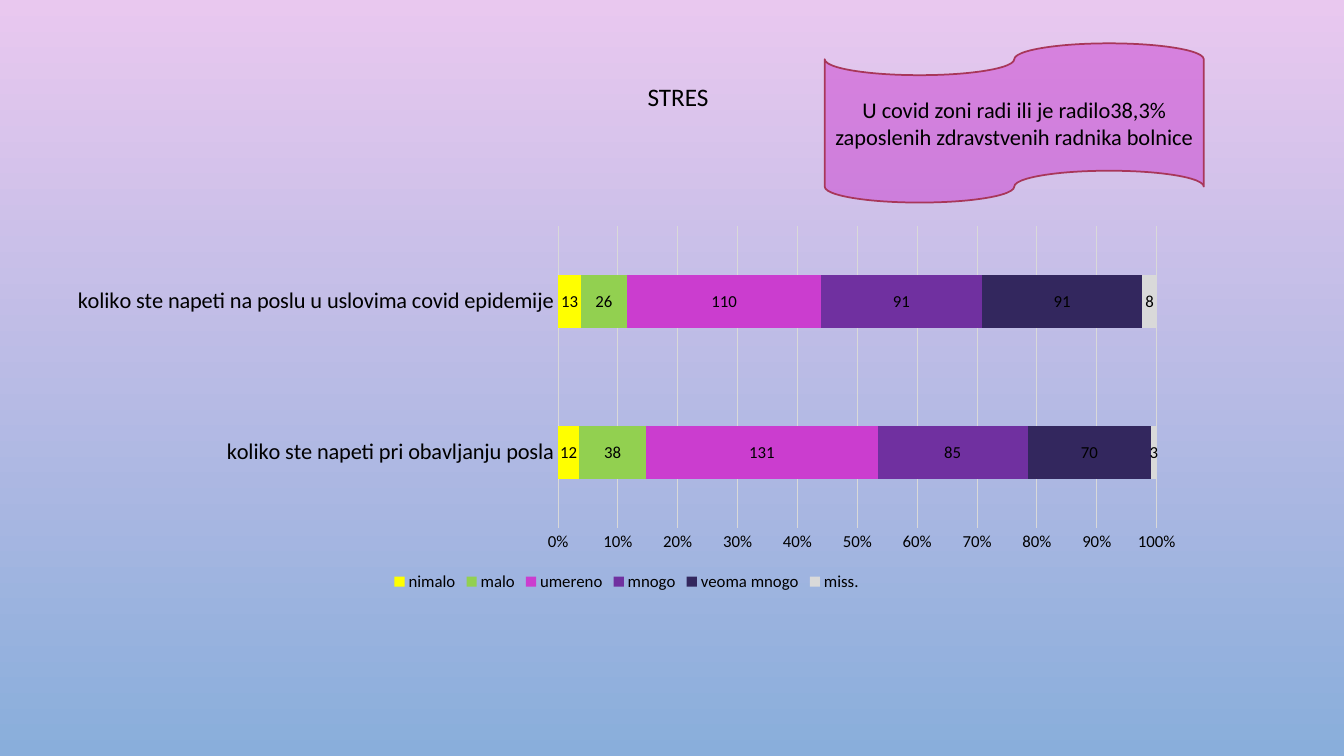
from lxml.etree import SubElement
from pptx import Presentation
from pptx.chart.data import CategoryChartData
from pptx.dml.color import RGBColor
from pptx.enum.chart import (XL_CHART_TYPE as ChartType, XL_LABEL_POSITION as LabelPosition,
                             XL_LEGEND_POSITION as LegendPosition, XL_TICK_MARK as TickMark)
from pptx.enum.shapes import MSO_SHAPE as Shape
from pptx.enum.text import MSO_ANCHOR as Anchor, PP_ALIGN as Align
from pptx.oxml import parse_xml
from pptx.oxml.ns import nsdecls, qn
from pptx.util import Inches, Pt

COLORS = {"text": "000000", "grid": "D9D9D9", "sky_top": "E9C8EF", "sky_bottom": "89AEDB",
          "tape": "CB3DCF", "tape_edge": "A8375A"}
CATEGORIES = ["koliko ste napeti pri obavljanju posla",
              "koliko ste napeti na poslu u uslovima covid epidemije"]
ANSWERS = [("nimalo", (12, 13), "FFFF00"), ("malo", (38, 26), "92D050"),
           ("umereno", (131, 110), "CB3DCF"), ("mnogo", (85, 91), "7030A0"),
           ("veoma mnogo", (70, 91), "33275E"), ("miss.", (3, 8), "D9D9D9")]
PLOT_LAYOUT = {"x": 0.44, "y": 0.02, "w": 0.524, "h": 0.8}


def apply_format(target, values):
    """Set each named attribute of the target."""
    for name, value in values.items():
        setattr(target, name, value)


def style_font(font, size):
    """Give a font the slide's typeface and colour."""
    apply_format(font, {"name": "Calibri", "size": Pt(size)})
    font.color.rgb = RGBColor.from_string(COLORS["text"])


def style_line(line, color, width):
    """Give a line a solid colour and a width in points."""
    line.color.rgb = RGBColor.from_string(color)
    line.width = Pt(width)


def paint_background(page):
    """Fill the page with a vertical gradient."""
    fill = page.background.fill
    fill.gradient()
    fill.gradient_angle = 270
    for stop, name in zip(fill.gradient_stops, ("sky_top", "sky_bottom")):
        stop.color.rgb = RGBColor.from_string(COLORS[name])


def write_text(box, text, size, spacing=1.0):
    """Write one centred paragraph into a shape."""
    apply_format(box.text_frame, {"word_wrap": True, "vertical_anchor": Anchor.MIDDLE})
    para = box.text_frame.paragraphs[0]
    apply_format(para, {"alignment": Align.CENTER, "line_spacing": spacing})
    span = para.add_run()
    span.text = text
    style_font(span.font, size)


def add_title(page, text):
    """Add the slide heading."""
    box = page.shapes.add_textbox(Inches(1.06), Inches(0.62), Inches(11.33), Inches(0.71))
    write_text(box, text, 18, 0.9)


def add_tape(page, text):
    """Add the half-transparent punched tape with its remark."""
    tape = page.shapes.add_shape(Shape.FLOWCHART_PUNCHED_TAPE, Inches(8.18), Inches(0.43),
                                 Inches(3.76), Inches(1.58))
    tape.shadow.inherit = False
    tape.fill.solid()
    tape.fill.fore_color.rgb = RGBColor.from_string(COLORS["tape"])
    color = tape.fill._xPr.find(qn("a:solidFill"))[0]
    SubElement(color, qn("a:alpha"), val="50000")
    style_line(tape.line, COLORS["tape_edge"], 1.25)
    write_text(tape, text, 16)


def place_plot(chart):
    """Fix the inner plot area inside the chart frame."""
    modes = "".join(f'<c:{side}Mode val="edge"/>' for side in "xy")
    sizes = "".join(f'<c:{side} val="{value}"/>' for side, value in PLOT_LAYOUT.items())
    layout = parse_xml(f'<c:layout {nsdecls("c")}><c:manualLayout><c:layoutTarget val="inner"/>'
                       f'{modes}{sizes}</c:manualLayout></c:layout>')
    area = chart._chartSpace.chart.plotArea
    for old in area.findall(qn("c:layout")):
        area.remove(old)
    area.insert(0, layout)


def style_axes(chart):
    """Format both axes and the gridlines."""
    for axis, size in ((chart.category_axis, 16), (chart.value_axis, 12)):
        apply_format(axis, {"major_tick_mark": TickMark.NONE, "minor_tick_mark": TickMark.NONE})
        style_font(axis.tick_labels.font, size)
    style_line(chart.category_axis.format.line, COLORS["grid"], 0.75)
    values = chart.value_axis
    values.format.line.fill.background()
    values.has_major_gridlines = True
    style_line(values.major_gridlines.format.line, COLORS["grid"], 0.75)
    apply_format(values.tick_labels, {"number_format": "0%", "number_format_is_linked": False})


def style_series(series, color):
    """Colour a series and label its bars with their values."""
    series.format.fill.solid()
    series.format.fill.fore_color.rgb = RGBColor.from_string(color)
    labels = series.data_labels
    apply_format(labels, {"show_value": True, "position": LabelPosition.CENTER})
    style_font(labels.font, 12)


def add_stress_chart(page):
    """Add the stacked bars of answers."""
    data = CategoryChartData()
    data.categories = CATEGORIES
    for name, values, _ in ANSWERS:
        data.add_series(name, values)
    chart = page.shapes.add_chart(ChartType.BAR_STACKED_100, Inches(0.55), Inches(2.17),
                                  Inches(11.33), Inches(3.74), data).chart
    apply_format(chart, {"has_title": False, "has_legend": True})
    style_font(chart.font, 10)
    apply_format(chart.legend, {"position": LegendPosition.BOTTOM, "include_in_layout": False})
    style_font(chart.legend.font, 12)
    plot = chart.plots[0]
    apply_format(plot, {"gap_width": 182, "overlap": 100, "vary_by_categories": False})
    for series, (_, _, color) in zip(plot.series, ANSWERS):
        style_series(series, color)
    style_axes(chart)
    place_plot(chart)


def main():
    """Build the slide and save it."""
    deck = Presentation()
    apply_format(deck, {"slide_width": Inches(13.33), "slide_height": Inches(7.5)})
    page = deck.slides.add_slide(deck.slide_layouts[6])
    paint_background(page)
    add_title(page, "STRES")
    add_stress_chart(page)
    add_tape(page, "U covid zoni radi ili je radilo38,3% zaposlenih zdravstvenih radnika bolnice")
    deck.save("out.pptx")


if __name__ == "__main__":
    main()
